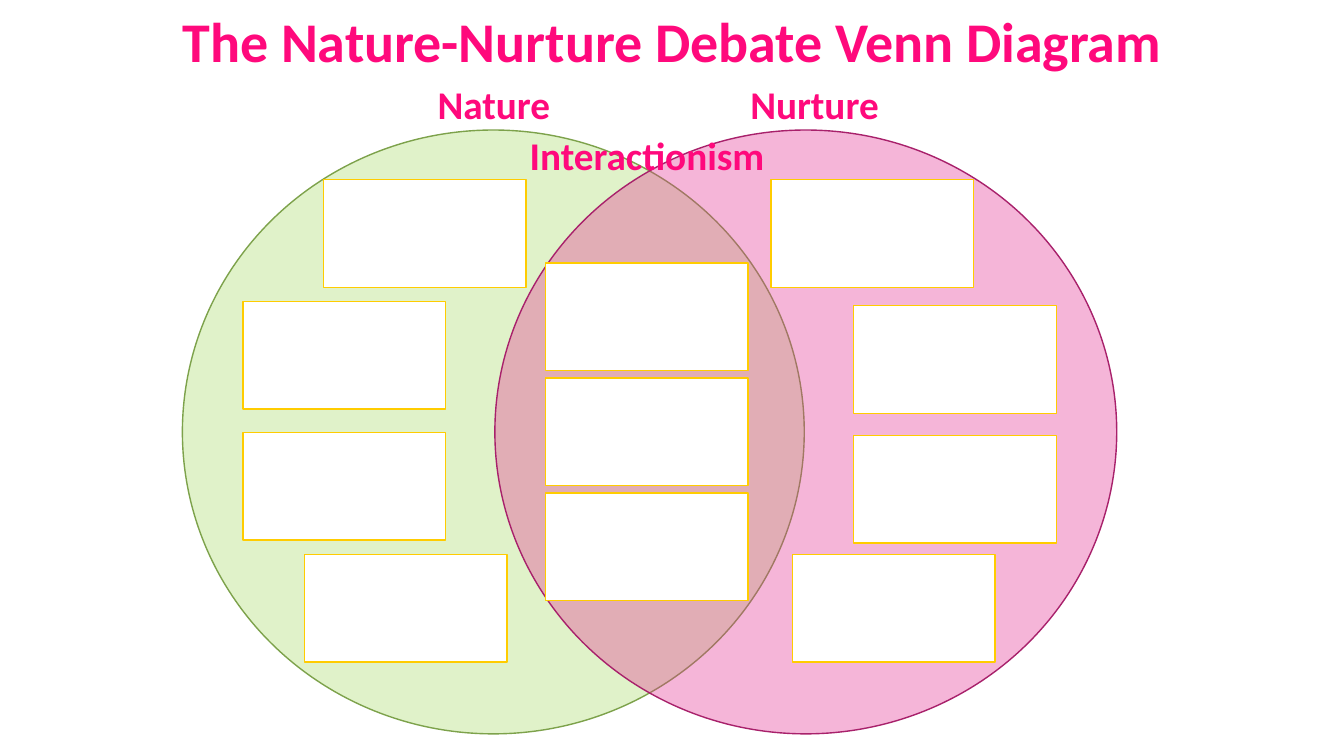
from dataclasses import dataclass

from lxml import etree
from pptx import Presentation
from pptx.dml.color import RGBColor
from pptx.enum.shapes import MSO_SHAPE as Kind
from pptx.enum.text import MSO_ANCHOR as Anchor, MSO_AUTO_SIZE as Fit, PP_ALIGN as Align
from pptx.oxml.ns import qn
from pptx.shapes.autoshape import Shape
from pptx.slide import Slide
from pptx.util import Pt

PINK = "FF097C"


@dataclass
class Area:
    left: float
    top: float
    width: float
    height: float


@dataclass
class Circle:
    left: float
    fill: str
    line: str


@dataclass
class Label:
    text: str
    area: Area


def color(code: str) -> RGBColor:
    return RGBColor.from_string(code)


def draw(slide: Slide, kind: Kind, area: Area, fill: str, line: str) -> Shape:
    shape = slide.shapes.add_shape(
        kind, Pt(area.left), Pt(area.top), Pt(area.width), Pt(area.height))
    shape.shadow.inherit = False
    shape.fill.solid()
    shape.fill.fore_color.rgb = color(fill)
    shape.line.color.rgb = color(line)
    shape.line.width = Pt(1)
    return shape


def fade(shape: Shape, percent: int) -> None:
    tint = shape.fill._xPr.find(qn("a:solidFill"))[0]
    etree.SubElement(tint, qn("a:alpha"), val=str(percent * 1000))


def write(shape: Shape, text: str, size: float) -> None:
    frame = shape.text_frame
    frame.word_wrap = True
    frame.auto_size = Fit.NONE
    frame.vertical_anchor = Anchor.TOP
    frame.text = text
    para = frame.paragraphs[0]
    para.alignment = Align.CENTER
    font = para.font
    font.name, font.size, font.bold = "Calibri", Pt(size), True
    font.color.rgb = color(PINK)


# Circles
CIRCLES = [Circle(130.3, "A9DB66", "7DA24B"), Circle(353.5, "E32D91", "A8216B")]

# Top left corners of the answer boxes
NATURE = [(231.1, 128.2), (173.5, 215.3), (173.5, 308.9), (217.4, 396)]
BOTH = [(389.5, 187.9 + 82.1 * row) for row in range(3)]
NURTURE = [(550.8, 128.2), (609.8, 218.2), (609.8, 311), (565.9, 396)]

# Labels
LABELS = [
    Label("Nature", Area(270.7, 54, 164.2, 41)),
    Label("Interactionism", Area(365, 90, 194.4, 41)),
    Label("Nurture", Area(499.7, 54, 164.2, 41)),
]


def main() -> None:
    deck = Presentation()
    deck.slide_width, deck.slide_height = Pt(960), Pt(540)
    slide = deck.slides.add_slide(deck.slide_layouts[5])

    # Title
    title = slide.shapes.title
    title.left, title.top = Pt(0), Pt(0.7)
    title.width, title.height = Pt(960), Pt(55.4)
    write(title, "The Nature-Nurture Debate Venn Diagram", 40)

    # Diagram
    for ring in CIRCLES:
        area = Area(ring.left, 92.9, 444.2, 431.3)
        fade(draw(slide, Kind.OVAL, area, ring.fill, ring.line), 35)
    for left, top in NATURE + BOTH + NURTURE:
        draw(slide, Kind.RECTANGLE, Area(left, top, 144.7, 77), "FFFFFF", "FFCC00")

    # Names of the parts
    for label in LABELS:
        area = label.area
        box = slide.shapes.add_textbox(
            Pt(area.left), Pt(area.top), Pt(area.width), Pt(area.height))
        write(box, label.text, 28)

    deck.save("out.pptx")


if __name__ == "__main__":
    main()
